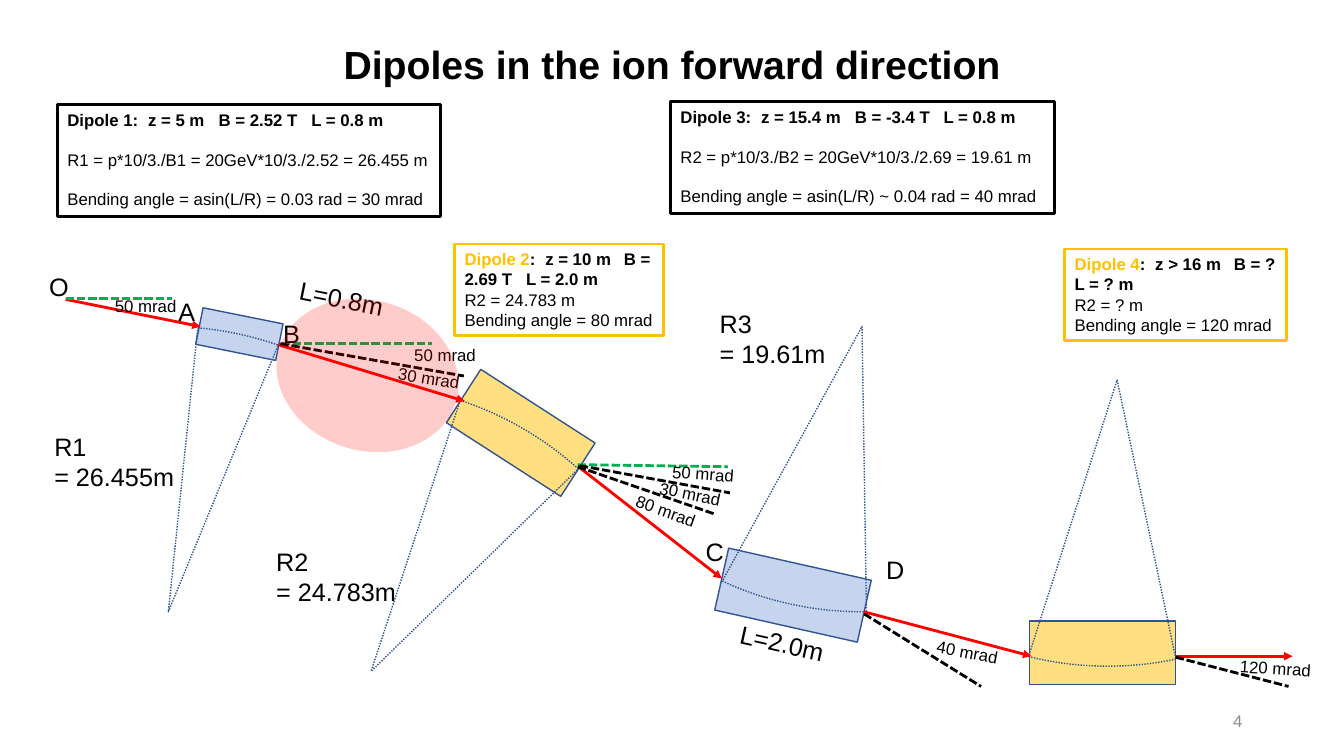
import pptx
import pptx.dml.color
import pptx.enum.dml
import pptx.enum.shapes
import pptx.enum.text
import pptx.oxml.ns
import pptx.oxml.xmlchemy
import pptx.util
import lxml.etree

Inches = pptx.util.Inches
Pt = pptx.util.Pt
SHAPE = pptx.enum.shapes.MSO_SHAPE
DASH = pptx.enum.dml.MSO_LINE
ALIGN = pptx.enum.text.PP_ALIGN
qn = pptx.oxml.ns.qn


class Deck:
    """Holds the style and the current slide, and draws each kind of element."""

    colours = {"black": "000000", "red": "FF0000", "green": "00B050", "gold": "FFC000",
               "blue": "8FAADC", "outline": "325491", "grey": "8C8C8C"}
    font = "Arial"

    def __init__(self, prs):
        self.s = prs.slides.add_slide(prs.slide_layouts[6])

    def rgb(self, colour):
        return pptx.dml.color.RGBColor.from_string(self.colours[colour])

    def line(self, start, end, colour, dashed=False):
        cxn = self.s.shapes.add_connector(pptx.enum.shapes.MSO_CONNECTOR.STRAIGHT,
                                          *map(Inches, start + end))
        cxn.line.color.rgb = self.rgb(colour)
        cxn.line.width = Pt(2)
        spPr = cxn._element.spPr
        if dashed:
            cxn.line.dash_style = DASH.SQUARE_DOT
        else:
            tail = lxml.etree.SubElement(spPr.get_or_add_ln(), qn("a:tailEnd"))
            tail.set("type", "triangle")
        lxml.etree.SubElement(spPr, qn("a:effectLst"))

    def shape(self, kind, at, rotation=0, fill=None, opacity=50, outline="outline", width=1):
        sp = self.s.shapes.add_shape(kind, *map(Inches, at))
        sp.rotation = rotation
        sp.shadow.inherit = False
        if fill:
            sp.fill.solid()
            sp.fill.fore_color.rgb = self.rgb(fill)
            clr = sp._element.spPr.find(".//" + qn("a:srgbClr"))
            lxml.etree.SubElement(clr, qn("a:alpha")).set("val", str(opacity * 1000))
        else:
            sp.fill.background()
        if outline:
            sp.line.color.rgb = self.rgb(outline)
            sp.line.width = Pt(width)
        else:
            sp.line.fill.background()
        return sp

    def arc(self, at, start, end, rotation=0):
        sp = self.shape(SHAPE.PIE, at, rotation)
        sp.adjustments[0], sp.adjustments[1] = start, end
        sp.line.dash_style = DASH.ROUND_DOT

    def run(self, p, text, size, colour="black", bold=False):
        r = p.add_run()
        r.text = text
        r.font.name = self.font
        r.font.size = Pt(size)
        r.font.bold = bold
        r.font.color.rgb = self.rgb(colour)

    def label(self, at, lines, size=12, rotation=0, wrap=False, bold=False,
              colour="black", align=ALIGN.LEFT):
        tb = self.s.shapes.add_textbox(*map(Inches, at))
        tb.rotation = rotation
        tf = tb.text_frame
        tf.word_wrap = wrap
        for i, text in enumerate(lines):
            p = tf.add_paragraph() if i else tf.paragraphs[0]
            p.alignment = align
            self.run(p, text, size, colour, bold)
        return tf

    def note(self, at, outline, name, heading, stops, lines, gap=0):
        tf = self.shape(SHAPE.RECTANGLE, at, outline=outline, width=2).text_frame
        tf.word_wrap = True
        tf.vertical_anchor = pptx.enum.text.MSO_ANCHOR.TOP
        p = tf.paragraphs[0]
        p.alignment = ALIGN.LEFT
        tabs = lxml.etree.SubElement(p._p.get_or_add_pPr(), qn("a:tabLst"))
        for stop in stops:
            tab = lxml.etree.SubElement(tabs, qn("a:tab"))
            tab.set("pos", str(Inches(stop)))
            tab.set("algn", "l")
        self.run(p, name, 12, outline, True)
        self.run(p, heading, 12, bold=True)
        for text in lines:
            p = tf.add_paragraph()
            p.alignment = ALIGN.LEFT
            p.space_before = Pt(gap)
            self.run(p, text, 12)


def main():
    prs = pptx.Presentation()
    prs.slide_width, prs.slide_height = Inches(13.33), Inches(7.5)
    deck = Deck(prs)

    deck.label((3.27, 0.35, 6.79, 0.55), ["Dipoles in the ion forward direction"],
               28, bold=True, align=ALIGN.CENTER)

    for at, rotation, fill in [
        ((1.97, 3.13, 0.81, 0.37), 11.4, "blue"),
        ((4.49, 3.98, 1.35, 0.63), 32.8, "gold"),
        ((7.14, 5.59, 1.45, 0.63), 12.7, "blue"),
        ((10.21, 6.16, 1.45, 0.63), 0, "gold"),
    ]:
        deck.shape(SHAPE.RECTANGLE, at, rotation, fill)

    for left, top, start, end, rotation in [
        (-1.4, 3.24, 165.55, 175.42, 0),
        (0.61, 3.83, 53.46, 69.93, 199.1),
        (5.48, 0.41, 53.46, 71.25, 0),
        (8.01, 0.94, 53.46, 71.25, 349),
    ]:
        deck.arc((left, top, 6.14, 5.66), start, end, rotation)

    for start, end in [
        ((0.65, 2.97), (1.99, 3.24)),
        ((2.76, 3.42), (4.61, 3.98)),
        ((5.75, 4.64), (7.16, 5.74)),
        ((8.57, 6.07), (10.23, 6.51)),
        ((11.66, 6.51), (12.82, 6.51)),
    ]:
        deck.line(start, end, "red")

    for start, end, colour in [
        ((0.65, 2.96), (1.71, 2.96), "green"),
        ((2.79, 3.41), (4.28, 3.41), "green"),
        ((5.73, 4.61), (7.22, 4.63), "green"),
        ((2.78, 3.41), (4.6, 3.73), "black"),
        ((5.75, 4.62), (7.24, 4.89), "black"),
        ((5.73, 4.63), (7.09, 5.1), "black"),
        ((8.57, 6.09), (9.73, 6.81), "black"),
        ((11.66, 6.52), (12.78, 6.81), "black"),
    ]:
        deck.line(start, end, colour, dashed=True)

    for left, top, width, rotation, angle in [
        (1.04, 2.88, 0.82, 0, 50),
        (4.01, 3.37, 0.82, 0, 50),
        (3.85, 3.61, 0.93, 9, 30),
        (6.57, 4.55, 0.82, 4.2, 50),
        (6.44, 4.76, 0.93, 11.5, 30),
        (6.2, 4.92, 0.82, 19.5, 80),
        (9.19, 6.33, 0.93, 10.5, 40),
        (12.2, 6.48, 0.93, 3.6, 120),
    ]:
        deck.label((left, top, width, 0.3), [f"{angle} mrad"], rotation=rotation,
                   wrap=width > 0.9)

    for left, top, width, rotation, text in [
        (0.39, 2.64, 0.4, 0, "O"),
        (1.67, 2.89, 0.37, 0, "A"),
        (2.71, 3.11, 0.37, 0, "B"),
        (6.9, 5.27, 0.38, 0, "C"),
        (8.69, 5.45, 0.38, 0, "D"),
        (2.87, 2.76, 1.05, 11.3, "L=0.8m"),
        (7.24, 6.18, 1.05, 12.5, "L=2.0m"),
    ]:
        deck.label((left, top, width, 0.4), [text], 18, rotation)

    for left, top, width, name, radius in [
        (0.44, 4.23, 1.4, "R1", "26.455m"),
        (2.64, 5.37, 1.4, "R2", "24.783m"),
        (7.04, 3.01, 1.26, "R3", "19.61m"),
    ]:
        deck.label((left, top, width, 0.71), [name, f"= {radius}"], 18)

    deck.note((0.57, 1.04, 3.8, 1.11), "black", "Dipole 1",
              ":\tz = 5 m\tB = 2.52 T\tL = 0.8 m", (0.8, 1.5, 2.42),
              ["R1 = p*10/3./B1 = 20GeV*10/3./2.52 = 26.455 m",
               "Bending angle = asin(L/R) = 0.03 rad = 30 mrad"], 13.8)
    deck.note((6.65, 1.01, 3.81, 1.11), "black", "Dipole 3",
              ":\tz = 15.4 m\tB = -3.4 T\tL = 0.8 m", (0.8, 1.73, 2.61),
              ["R2 = p*10/3./B2 = 20GeV*10/3./2.69 = 19.61 m",
               "Bending angle = asin(L/R) ~ 0.04 rad = 40 mrad"], 13.8)
    deck.note((4.51, 2.42, 2.07, 0.91), "gold", "Dipole 2",
              ":\tz = 10 m\tB = 2.69 T\tL = 2.0 m", (0.61, 0.8, 1.58),
              ["R2 = 24.783 m", "Bending angle = 80 mrad"])
    deck.note((10.56, 2.47, 2.2, 0.91), "gold", "Dipole 4",
              ":\tz > 16 m\tB = ?\tL = ? m", (0.09, 0.8, 1.58),
              ["R2 = ? m", "Bending angle = 120 mrad"])

    deck.shape(SHAPE.OVAL, (2.73, 2.98, 1.83, 1.49), 17, "red", 20, outline=None)
    tf = deck.label((9.42, 6.95, 3, 0.4), ["4"], wrap=True, colour="grey", align=ALIGN.RIGHT)
    tf.vertical_anchor = pptx.enum.text.MSO_ANCHOR.MIDDLE

    prs.save("out.pptx")


if __name__ == "__main__":
    main()
